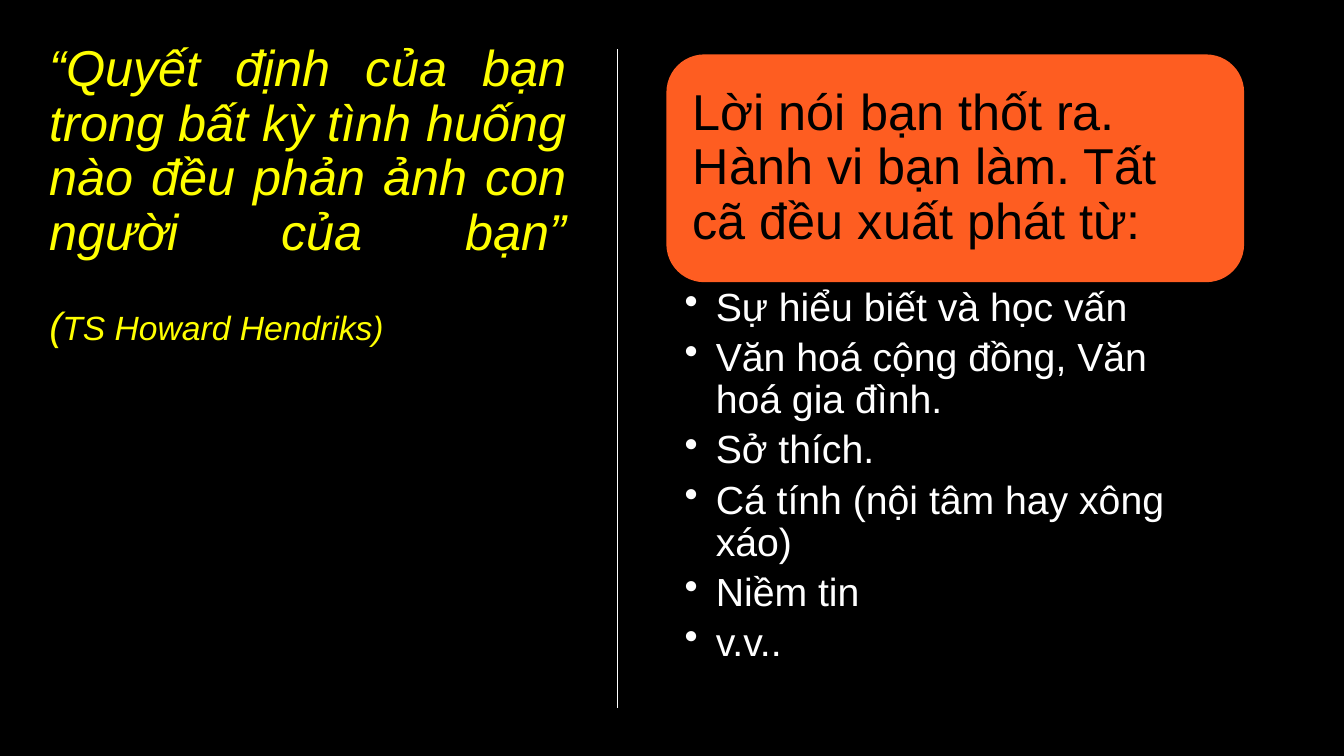
from dataclasses import dataclass

from lxml import etree
from pptx import Presentation
from pptx.dml.color import RGBColor
from pptx.enum.shapes import MSO_CONNECTOR, MSO_SHAPE
from pptx.enum.text import MSO_ANCHOR, MSO_AUTO_SIZE, PP_ALIGN
from pptx.oxml.ns import qn
from pptx.util import Inches, Pt

LEFT, JUSTIFY = PP_ALIGN.LEFT, PP_ALIGN.JUSTIFY
TOP, MIDDLE = MSO_ANCHOR.TOP, MSO_ANCHOR.MIDDLE
NO_FIT = MSO_AUTO_SIZE.NONE
ROUND, STRAIGHT = MSO_SHAPE.ROUNDED_RECTANGLE, MSO_CONNECTOR.STRAIGHT


@dataclass(frozen=True)
class Theme:
    font: str = "Arial"
    black: RGBColor = RGBColor(0, 0, 0)
    white: RGBColor = RGBColor(255, 255, 255)
    yellow: RGBColor = RGBColor(255, 255, 0)
    orange: RGBColor = RGBColor(0xFE, 0x5D, 0x21)
    big: int = 36
    gap: int = 30
    mid: int = 28
    small: int = 24


theme = Theme()


def write(text, para, size, color, italic=False, align=LEFT, after=0):
    """Add a run to para and set the paragraph's layout."""
    para.alignment = align
    para.line_spacing = 0.9
    para.space_before, para.space_after = Pt(0), Pt(after)
    run = para.add_run()
    run.text = text
    font = run.font
    font.name, font.size, font.italic = theme.font, Pt(size), italic
    font.color.rgb = color


def frame(shape, insets, anchor=TOP):
    """Prepare a shape's text frame; insets run left, top, right, bottom."""
    body = shape.text_frame
    body.word_wrap, body.auto_size = True, NO_FIT
    body.vertical_anchor = anchor
    (body.margin_left, body.margin_top,
     body.margin_right, body.margin_bottom) = map(Inches, insets)
    return body


deck = Presentation()
deck.slide_width, deck.slide_height = Inches(13.33), Inches(7.5)
slide = deck.slides.add_slide(deck.slide_layouts[5])
back = slide.background.fill
back.solid()
back.fore_color.rgb = theme.black

# Quote and its author
title = slide.shapes.title
title.left, title.top = Inches(0.49), Inches(0.43)
title.width, title.height = Inches(5.13), Inches(6.52)
quote = frame(title, (0, 0, 0, 0)).paragraphs[0]
style = dict(color=theme.yellow, italic=True, align=JUSTIFY)
write("“Quyết định của bạn trong bất kỳ tình huống nào đều phản ảnh "
      "con người của bạn”", quote, theme.big, **style)
# Line breaks keep the quote's last line justified
for _ in range(2):
    quote.add_line_break()
for brk in quote._p.findall(qn("a:br")):
    etree.SubElement(brk, qn("a:rPr"), sz=str(theme.gap * 100))
write("(", quote, theme.mid, **style)
write("TS Howard Hendriks)", quote, theme.small, **style)

# Divider
rule = slide.shapes.add_connector(
    STRAIGHT, Inches(6.12), Inches(0.49), Inches(6.12), Inches(7.02))
rule.line.color.rgb = theme.white
rule.line.width = Pt(0.75)
etree.SubElement(rule._element.spPr, qn("a:effectLst"))

# Heading card
left, width = Inches(6.61), Inches(5.73)
card = slide.shapes.add_shape(ROUND, left, Inches(0.54), width, Inches(2.26))
card.shadow.inherit = False
card.fill.solid()
card.fill.fore_color.rgb = theme.orange
card.line.fill.background()
head = frame(card, (0.15, 0.15, 0.15, 0.15), MIDDLE).paragraphs[0]
write("Lời nói bạn thốt ra. Hành vi bạn làm. Tất cã đều xuất phát từ:",
      head, theme.big, theme.black)

# Bulleted causes
causes = (
    "Sự hiểu biết và học vấn",
    "Văn hoá cộng đồng, Văn hoá gia đình.",
    "Sở thích.",
    "Cá tính (nội tâm hay xông xáo)",
    "Niềm tin",
    "v.v..",
)
box = slide.shapes.add_textbox(left, Inches(2.8), width, Inches(4.16))
body = frame(box, (0.18, 0.05, 0.28, 0.05))
for i, cause in enumerate(causes):
    para = body.add_paragraph() if i else body.paragraphs[0]
    write(cause, para, theme.mid, theme.white, after=5.6)
    props = para._p.get_or_add_pPr()
    props.set("marL", str(Inches(0.31)))
    props.set("indent", str(-Inches(0.31)))
    etree.SubElement(props, qn("a:buChar"), char="•")

deck.save("out.pptx")
